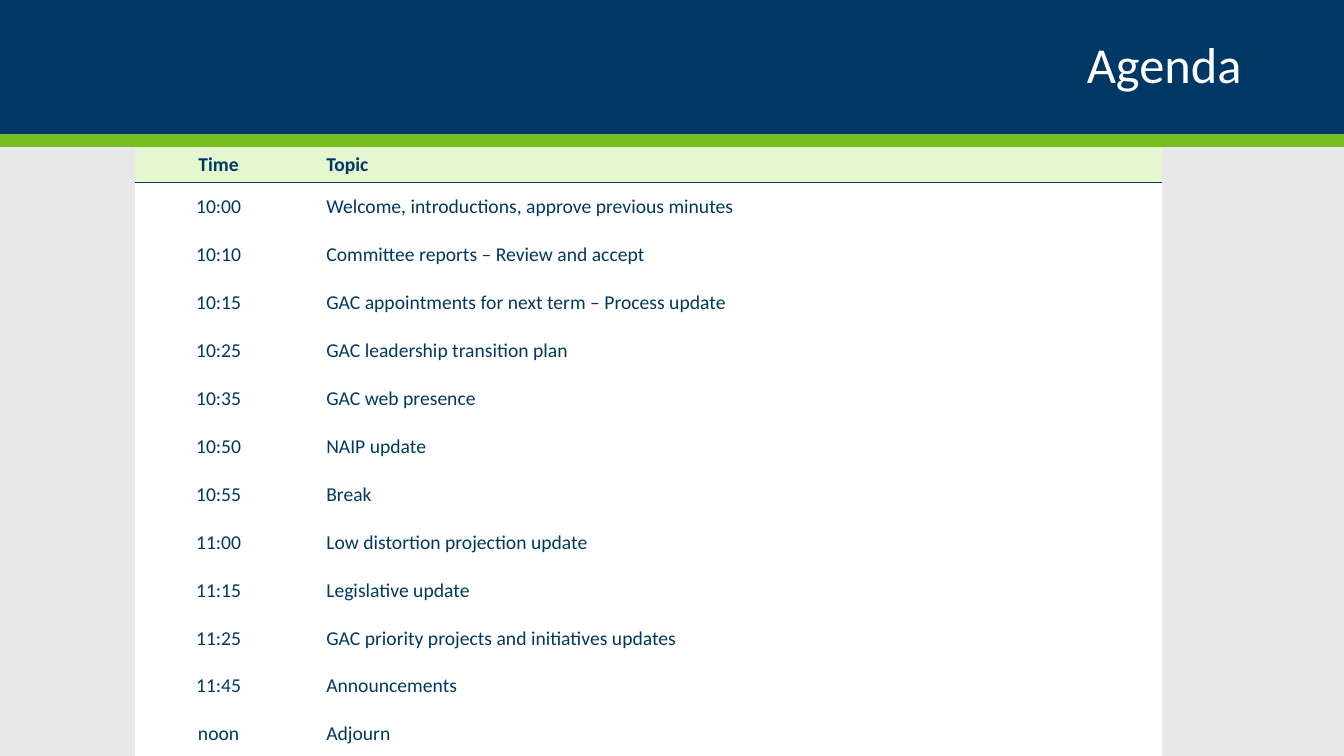
from dataclasses import dataclass

from lxml import etree
from pptx import Presentation
from pptx import util as u
from pptx.dml.color import RGBColor
from pptx.enum import shapes, text
from pptx.oxml import ns

COLORS = {
    "navy": "003865",
    "green": "78BE21",
    "pale_green": "E4F7CE",
    "white": "FFFFFF",
    "gray": "E8E8E8",
}
FONT = "Calibri"
GRID_COLUMNS, GRID_ROWS = 160, 90
CELL = u.Inches(1) / 12
NO_STYLE = "{2D5ABB26-0587-4C30-8999-92F81FD0307C}"
TIME_WIDTH, TOPIC_WIDTH = 19.9, 102.3
HEADER_HEIGHT, ITEM_HEIGHT = 4.08, 5.4
PADDING = u.Pt(8.6)


@dataclass(frozen=True)
class Box:
    column: float
    row: float
    columns: float
    rows: float

    def lengths(self) -> tuple:
        return tuple(map(grid, (self.column, self.row, self.columns, self.rows)))


@dataclass(frozen=True)
class Band:
    box: Box
    color: str


@dataclass(frozen=True)
class Item:
    time: str
    topic: str


BANDS = [
    Band(Box(0, 0, GRID_COLUMNS, 16), "navy"),
    Band(Box(0, 16, GRID_COLUMNS, 1.5), "green"),
]
TITLE_BOX = Box(11, 2, 138, 12)
HEADINGS = Item("Time", "Topic")
AGENDA = [
    Item("10:00", "Welcome, introductions, approve previous minutes"),
    Item("10:10", "Committee reports – Review and accept"),
    Item("10:15", "GAC appointments for next term – Process update"),
    Item("10:25", "GAC leadership transition plan"),
    Item("10:35", "GAC web presence"),
    Item("10:50", "NAIP update"),
    Item("10:55", "Break"),
    Item("11:00", "Low distortion projection update"),
    Item("11:15", "Legislative update"),
    Item("11:25", "GAC priority projects and initiatives updates"),
    Item("11:45", "Announcements"),
    Item("noon", "Adjourn"),
]
TABLE_BOX = Box(16.08, 17.5, TIME_WIDTH + TOPIC_WIDTH,
                HEADER_HEIGHT + ITEM_HEIGHT * len(AGENDA))


def grid(units: float) -> int:
    return round(units * CELL)


def color(name: str) -> RGBColor:
    return RGBColor.from_string(COLORS[name])


def fill_solid(target, name: str) -> None:
    target.fill.solid()
    target.fill.fore_color.rgb = color(name)


def add_run(paragraph, words: str, size: float, name: str, bold: bool = False) -> None:
    run = paragraph.add_run()
    run.text = words
    run.font.name = FONT
    run.font.size = u.Pt(size)
    run.font.bold = bold
    run.font.color.rgb = color(name)


def add_band(slide, band: Band) -> None:
    shape = slide.shapes.add_shape(shapes.MSO_SHAPE.RECTANGLE, *band.box.lengths())
    shape.shadow.inherit = False
    fill_solid(shape, band.color)
    shape.line.fill.background()


def set_title(slide, words: str) -> None:
    title = slide.shapes.title
    title.left, title.top, title.width, title.height = TITLE_BOX.lengths()
    frame = title.text_frame
    frame.word_wrap = True
    frame.vertical_anchor = text.MSO_ANCHOR.MIDDLE
    paragraph = frame.paragraphs[0]
    paragraph.alignment = text.PP_ALIGN.RIGHT
    paragraph.line_spacing = 0.9
    add_run(paragraph, words, 36, "white")
    slide.shapes._spTree.append(title._element)


def add_border(cell, side: str, visible: bool) -> None:
    properties = cell._tc.get_or_add_tcPr()
    line = etree.SubElement(properties, ns.qn(f"a:{side}"), w=str(u.Pt(1)))
    if visible:
        solid = etree.SubElement(line, ns.qn("a:solidFill"))
        etree.SubElement(solid, ns.qn("a:srgbClr"), val=COLORS["navy"])
    else:
        etree.SubElement(line, ns.qn("a:noFill"))


def write_row(table, index: int, item: Item) -> None:
    is_header = index == 0
    is_last = index == len(AGENDA)
    table.rows[index].height = grid(HEADER_HEIGHT if is_header else ITEM_HEIGHT)
    columns = (
        (item.time, text.PP_ALIGN.CENTER, PADDING),
        (item.topic, text.PP_ALIGN.LEFT, 2 * PADDING),
    )
    for cell, (words, alignment, left) in zip(table.rows[index].cells, columns):
        cell.margin_left, cell.margin_right = left, PADDING
        cell.margin_top = PADDING // 2 if is_header else PADDING
        cell.margin_bottom = u.Pt(6.8) if is_last else cell.margin_top
        cell.vertical_anchor = text.MSO_ANCHOR.MIDDLE
        add_border(cell, "lnT", index == 1)
        add_border(cell, "lnB", is_header)
        fill_solid(cell, "pale_green" if is_header else "white")
        paragraph = cell.text_frame.paragraphs[0]
        paragraph.alignment = alignment
        add_run(paragraph, words, 14, "navy", is_header)


def add_agenda(slide) -> None:
    rows = [HEADINGS, *AGENDA]
    table = slide.shapes.add_table(len(rows), 2, *TABLE_BOX.lengths()).table
    table.horz_banding = False
    table._tbl.tblPr.find(ns.qn("a:tableStyleId")).text = NO_STYLE
    for column, width in zip(table.columns, (TIME_WIDTH, TOPIC_WIDTH)):
        column.width = grid(width)
    for index, item in enumerate(rows):
        write_row(table, index, item)


def main() -> None:
    presentation = Presentation()
    presentation.slide_width = grid(GRID_COLUMNS)
    presentation.slide_height = grid(GRID_ROWS)
    slide = presentation.slides.add_slide(presentation.slide_layouts[5])
    fill_solid(slide.background, "gray")
    for band in BANDS:
        add_band(slide, band)
    set_title(slide, "Agenda")
    add_agenda(slide)
    presentation.save("out.pptx")


if __name__ == "__main__":
    main()
